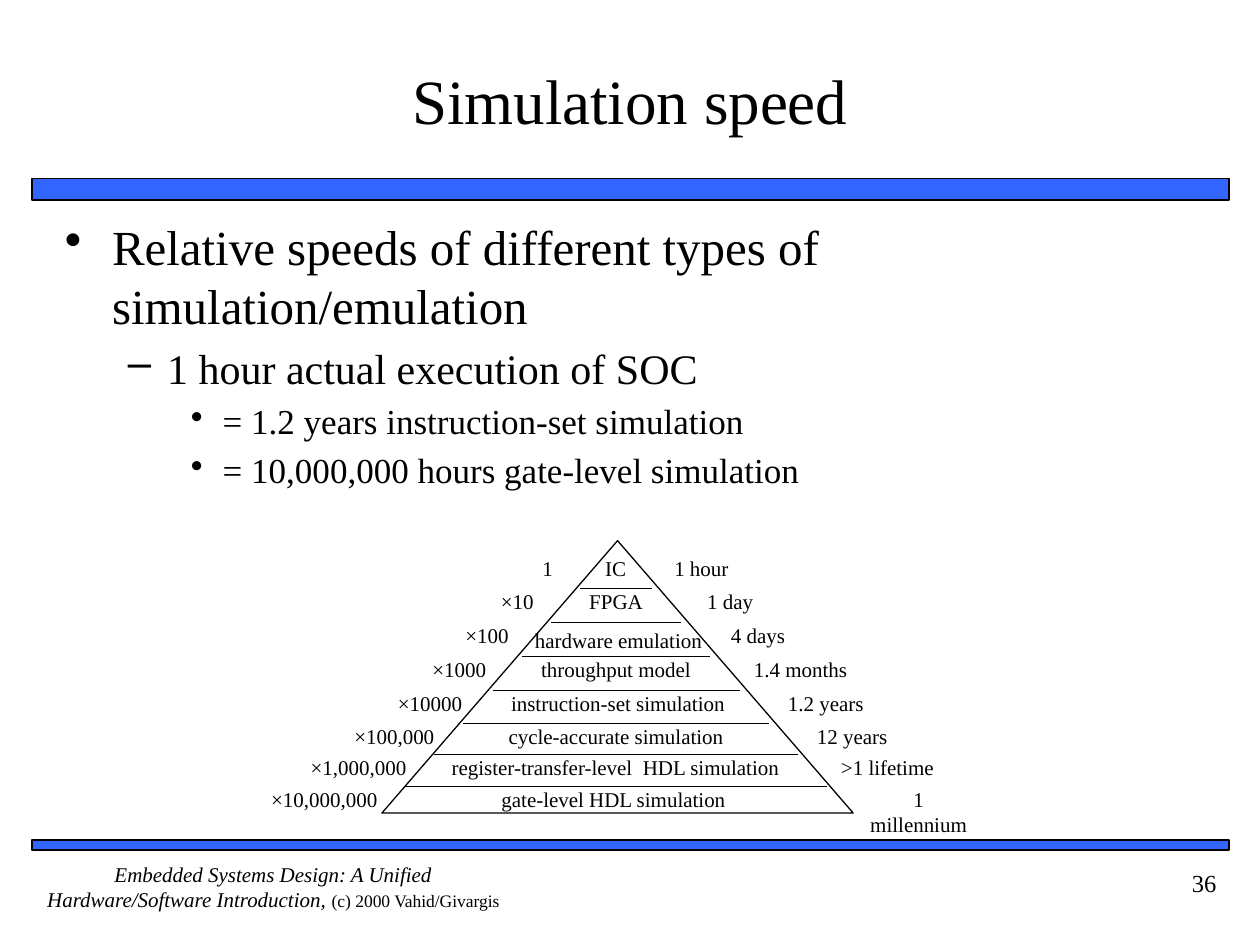
"""Build the slide on relative simulation speeds with its pyramid of models."""
from lxml.etree import SubElement
from pptx import Presentation
from pptx.dml.color import RGBColor
from pptx.enum.shapes import MSO_CONNECTOR, MSO_SHAPE
from pptx.enum.text import MSO_ANCHOR, PP_ALIGN
from pptx.oxml.ns import qn
from pptx.util import Cm, Pt

FONT, BLACK, WHITE, BLUE = "Times New Roman", "000000", "FFFFFF", "3366FF"
TITLE = "Simulation speed"
PAGE_NUMBER = "36"
FOOTER = [
    ("Embedded Systems Design: A Unified Hardware/Software Introduction, ", 12, True),
    ("(c) 2000 Vahid/Givargis", 10, False),
]
BULLETS = [
    (0, "Relative speeds of different types of simulation/emulation"),
    (1, "1 hour actual execution of SOC"),
    (2, "= 1.2 years instruction-set simulation"),
    (2, "= 10,000,000 hours gate-level simulation"),
]
LEVELS = [("•", 28, 0.95, 0.95), ("–", 24, 2.06, 0.79), ("•", 20, 3.18, 0.64)]
BARS = [(3.6, 0.43), (16.93, 0.21)]

# Each tier: top, then (text, centre, width) for slowdown, model and duration.
TIERS = [
    (11.2, ("1", 11.04, 1.45), ("IC", 12.41, 2.01), ("1 hour", 14.14, 1.45)),
    (11.86, ("×10", 10.43, 1.45), ("FPGA", 12.42, 4.32), ("1 day", 14.72, 1.45)),
    (12.55, ("×100", 9.82, 1.45), ("hardware emulation", 12.47, 4.32), ("4 days", 15.28, 1.45)),
    (13.23, ("×1000", 9.26, 1.45), ("throughput model", 12.42, 4.32), ("1.4 months", 16.14, 2.01)),
    (13.92, ("×10000", 8.67, 1.45), ("instruction-set simulation", 12.46, 4.55), ("1.2 years", 16.65, 2.01)),
    (14.58, ("×100,000", 7.95, 1.73), ("cycle-accurate simulation", 12.42, 4.62), ("12 years", 17.18, 2.01)),
    (15.21, ("×1,000,000", 7.23, 2.01), ("register-transfer-level  HDL simulation", 12.41, 7.19), (">1 lifetime", 17.89, 2.01)),
    (15.85, ("×10,000,000", 6.54, 2.26), ("gate-level HDL simulation", 12.37, 4.62), ("1 millennium", 18.52, 2.08)),
]
LABEL_HEIGHT = 0.64
LOWERED = {"hardware emulation": 0.1}
DIVIDER_CENTRE, FIRST_HALF, HALF_STEP = 12.42, 0.72, 0.59


def color(value):
    return RGBColor.from_string(value)


def style(font, size, italic=False):
    font.name, font.size, font.italic = FONT, Pt(size), italic
    font.color.rgb = color(BLACK)


def set_margins(frame, side, end):
    frame.margin_left = frame.margin_right = Cm(side)
    frame.margin_top = frame.margin_bottom = Cm(end)
    frame.word_wrap = True


def add_text_frame(shapes, left, top, width, height, side=0, end=0):
    box = shapes.add_textbox(Cm(left), Cm(top), Cm(width), Cm(height))
    set_margins(box.text_frame, side, end)
    return box.text_frame


def add_line_of_text(frame, text, size, align):
    para = frame.paragraphs[0]
    para.text, para.alignment = text, align
    style(para.font, size)
    return para


def add_filled(shapes, kind, left, top, width, height, fill, weight):
    shape = shapes.add_shape(kind, Cm(left), Cm(top), Cm(width), Cm(height))
    shape.shadow.inherit = False
    shape.fill.solid()
    shape.fill.fore_color.rgb = color(fill)
    shape.line.color.rgb = color(BLACK)
    shape.line.width = Pt(weight)


def add_divider(shapes, half, y):
    line = shapes.add_connector(
        MSO_CONNECTOR.STRAIGHT,
        Cm(DIVIDER_CENTRE - half), Cm(y), Cm(DIVIDER_CENTRE + half), Cm(y))
    line.line.color.rgb = color(BLACK)
    line.line.width = Pt(0.75)
    SubElement(line._element.spPr, qn("a:effectLst"))


def add_title(page):
    title = page.shapes.title
    title.left, title.top, title.width, title.height = Cm(1.06), Cm(0.42), Cm(23.28), Cm(3.18)
    set_margins(title.text_frame, 0, 0.13)
    title.text_frame.vertical_anchor = MSO_ANCHOR.MIDDLE
    add_line_of_text(title.text_frame, TITLE, 36, PP_ALIGN.CENTER)


def add_footer(page):
    para = add_text_frame(page.shapes, 0.64, 17.36, 9.74, 1.27).paragraphs[0]
    para.alignment = PP_ALIGN.CENTER
    for text, size, italic in FOOTER:
        span = para.add_run()
        span.text = text
        style(span.font, size, italic)
    number = add_text_frame(page.shapes, 22.23, 17.36, 2.54, 1.27, 0.25, 0.13)
    add_line_of_text(number, PAGE_NUMBER, 14, PP_ALIGN.RIGHT).space_before = Pt(7)


def add_bullets(page):
    frame = add_text_frame(page.shapes, 1.06, 4.23, 23.37, 6.3, 0.25, 0.13)
    for index, (level, text) in enumerate(BULLETS):
        mark, size, indent, hanging = LEVELS[level]
        para = frame.add_paragraph() if index else frame.paragraphs[0]
        para.text, para.level = text, level
        para.space_before = Pt(size * 0.2)
        style(para.font, size)
        properties = para._p.get_or_add_pPr()
        properties.set("marL", str(Cm(indent)))
        properties.set("indent", str(-Cm(hanging)))
        bullet = properties.makeelement(qn("a:buChar"), {"char": mark})
        properties.find(qn("a:defRPr")).addprevious(bullet)


def add_pyramid(page):
    shapes = page.shapes.add_group_shape().shapes
    add_filled(shapes, MSO_SHAPE.ISOSCELES_TRIANGLE, 7.7, 10.9, 9.5, 5.49, WHITE, 0.75)
    for index, (top, *labels) in enumerate(TIERS):
        if index:
            add_divider(shapes, FIRST_HALF + HALF_STEP * (index - 1), top)
        for text, centre, width in labels:
            frame = add_text_frame(shapes, centre - width / 2, top + LOWERED.get(text, 0),
                                   width, LABEL_HEIGHT)
            add_line_of_text(frame, text, 12, PP_ALIGN.CENTER)


def main():
    deck = Presentation()
    deck.slide_width, deck.slide_height = Cm(25.4), Cm(19.05)
    page = deck.slides.add_slide(deck.slide_layouts[5])
    for top, height in BARS:
        add_filled(page.shapes, MSO_SHAPE.RECTANGLE, 0.64, top, 24.13, height, BLUE, 1)
    add_title(page)
    add_footer(page)
    add_bullets(page)
    add_pyramid(page)
    deck.save("out.pptx")


if __name__ == "__main__":
    main()
